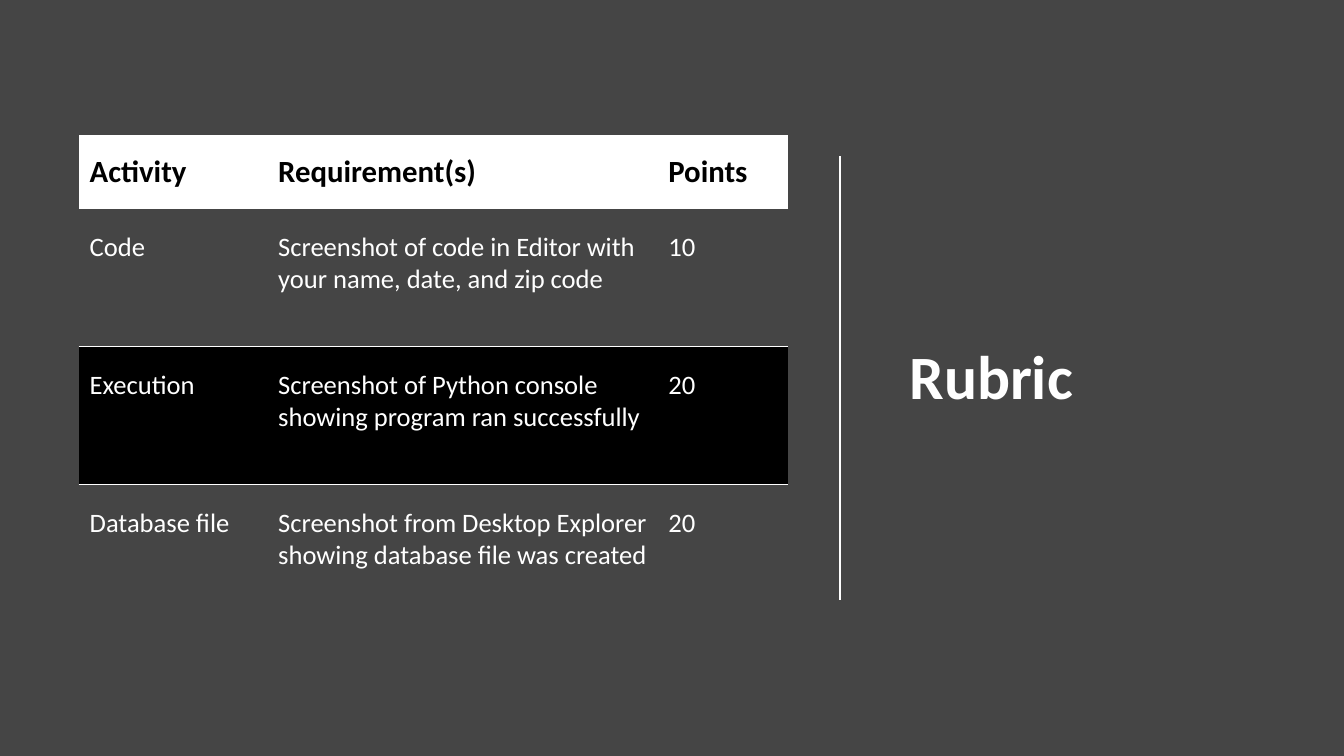
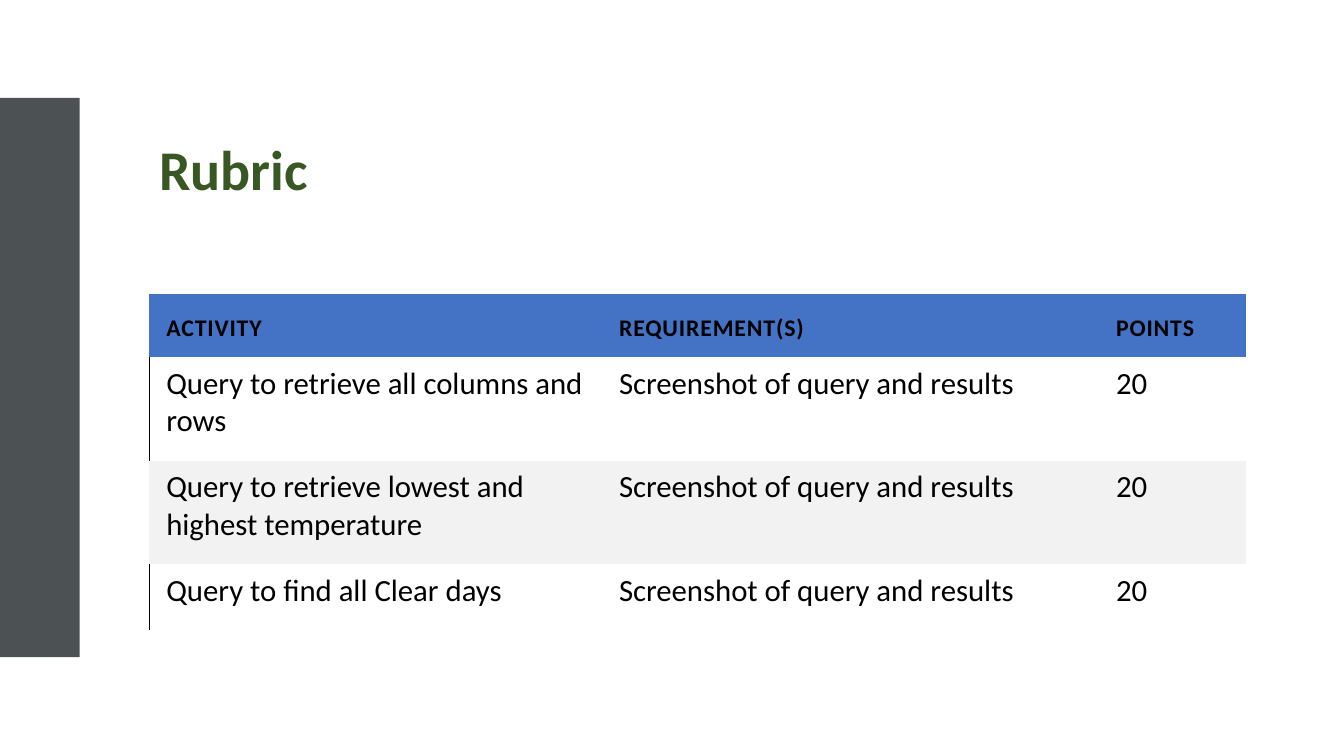
"""Build two rubric slides, each with a title and a grading table."""
from lxml import etree
from pptx import Presentation
from pptx.dml.color import RGBColor
from pptx.enum.shapes import MSO_CONNECTOR, MSO_SHAPE
from pptx.enum.text import MSO_ANCHOR, MSO_AUTO_SIZE, PP_ALIGN
from pptx.oxml.ns import qn
from pptx.util import Inches, Pt

TOP, MIDDLE, BOTTOM = MSO_ANCHOR.TOP, MSO_ANCHOR.MIDDLE, MSO_ANCHOR.BOTTOM
LEFT = PP_ALIGN.LEFT
STRAIGHT, RECTANGLE = MSO_CONNECTOR.STRAIGHT, MSO_SHAPE.RECTANGLE
NO_AUTOFIT = MSO_AUTO_SIZE.NONE

FONT = "Calibri"
TITLE = "Rubric"
TITLE_ONLY_LAYOUT = 5
PLAIN_TABLE_STYLE = "{2D5ABB26-0587-4C30-8999-92F81FD0307C}"
COLORS = {
    "charcoal": "454545",
    "white": "FFFFFF",
    "black": "000000",
    "green": "385723",
    "slate": "4C5254",
    "blue": "4472C4",
    "pale": "F2F2F2",
}

PROJECT_ROWS = [
    ("Activity", "Requirement(s)", "Points"),
    ("Code", "Screenshot of code in Editor with your name, date, and zip code", "10"),
    ("Execution", "Screenshot of Python console showing program ran successfully", "20"),
    ("Database file", "Screenshot from Desktop Explorer showing database file was created", "20"),
]
QUERY_RESULT = ("Screenshot of query and results", "20")
QUERY_ROWS = [
    ("ACTIVITY", "REQUIREMENT(S)", "POINTS"),
    ("Query to retrieve all columns and rows", *QUERY_RESULT),
    ("Query to retrieve lowest and highest temperature", *QUERY_RESULT),
    ("Query to find all Clear days", *QUERY_RESULT),
]

PROJECT_STYLE = {
    "header": {"size": 22, "color": "black", "bold": True, "anchor": MIDDLE,
               "insets": (0.11, 0.15, 0.08, 0.15), "fill": "white"},
    "body": {"size": 19, "color": "white", "bold": False, "anchor": TOP,
             "insets": (0.11, 0.22, 0.08, 0.15)},
    "band": "black",
}
QUERY_STYLE = {
    "header": {"size": 17, "color": "black", "bold": True, "anchor": BOTTOM,
               "insets": (0.17, 0.14, 0.17, 0.14), "fill": "blue", "spacing": 60},
    "body": {"size": 22, "color": "black", "bold": False, "anchor": TOP,
             "insets": (0.17, 0.08, 0.17, 0.14)},
    "band": "pale",
}


def rgb(name):
    return RGBColor.from_string(COLORS[name])


def write_run(paragraph, text, size, color, bold):
    paragraph.alignment = LEFT
    run = paragraph.add_run()
    run.text = text
    run.font.name = FONT
    run.font.size = Pt(size)
    run.font.bold = bold
    run.font.color.rgb = rgb(color)
    return run


def add_titled_slide(deck, background, box, size, color, anchor):
    slide = deck.slides.add_slide(deck.slide_layouts[TITLE_ONLY_LAYOUT])
    slide.background.fill.solid()
    slide.background.fill.fore_color.rgb = rgb(background)
    title = slide.shapes.title
    title.left, title.top, title.width, title.height = map(Inches, box)
    frame = title.text_frame
    frame.word_wrap = True
    frame.auto_size = NO_AUTOFIT
    frame.vertical_anchor = anchor
    paragraph = frame.paragraphs[0]
    paragraph.line_spacing = 0.9
    write_run(paragraph, TITLE, size, color, True)
    return slide


def draw_border(cell, side, color):
    border = etree.Element(qn(f"a:ln{side}"), w=str(Pt(1)))
    fill = etree.SubElement(border, qn("a:solidFill"))
    etree.SubElement(fill, qn("a:srgbClr"), val=COLORS[color])
    cell._tc.get_or_add_tcPr().insert(0, border)


def fill_cell(cell, text, style, fill):
    cell.margin_left, cell.margin_top, cell.margin_right, cell.margin_bottom = map(
        Inches, style["insets"])
    cell.vertical_anchor = style["anchor"]
    if fill:
        cell.fill.solid()
        cell.fill.fore_color.rgb = rgb(fill)
    else:
        cell.fill.background()
    run = write_run(cell.text_frame.paragraphs[0], text,
                    style["size"], style["color"], style["bold"])
    if "spacing" in style:
        run.font._element.set("spc", str(style["spacing"]))


def add_rubric(slide, rows, left, top, widths, heights, style):
    table = slide.shapes.add_table(
        len(rows), len(widths), Inches(left), Inches(top),
        Inches(sum(widths)), Inches(sum(heights))).table
    table.first_row = table.horz_banding = False
    table._tbl.tblPr.find(qn("a:tableStyleId")).text = PLAIN_TABLE_STYLE
    for column, width in zip(table.columns, widths):
        column.width = Inches(width)
    for row, height in zip(table.rows, heights):
        row.height = Inches(height)
    for r, texts in enumerate(rows):
        part = style["body"] if r else style["header"]
        fill = part.get("fill") or (style["band"] if r % 2 == 0 else None)
        for c, text in enumerate(texts):
            fill_cell(table.cell(r, c), text, part, fill)
    return table


def add_project_slide(deck):
    slide = add_titled_slide(deck, "charcoal", (8.92, 0.9, 3.63, 3.25), 44, "white", BOTTOM)
    divider = slide.shapes.add_connector(
        STRAIGHT, Inches(8.33), Inches(1.55), Inches(8.33), Inches(5.95))
    divider.line.color.rgb = rgb("white")
    divider.line.width = Pt(1.25)
    etree.SubElement(divider._element.spPr, qn("a:effectLst"))
    table = add_rubric(slide, PROJECT_ROWS, 0.78, 1.34, (1.87, 3.87, 1.3),
                       (0.73, 1.37, 1.37, 1.37), PROJECT_STYLE)
    for c in range(len(table.columns)):
        draw_border(table.cell(1, c), "B", "white")
        draw_border(table.cell(2, c), "T", "white")


def add_query_slide(deck):
    slide = add_titled_slide(deck, "white", (1.48, 0.97, 10.88, 1.47), 40, "green", MIDDLE)
    side_band = slide.shapes.add_shape(
        RECTANGLE, Inches(0), Inches(0.97), Inches(0.79), Inches(5.55))
    side_band.shadow.inherit = False
    side_band.fill.solid()
    side_band.fill.fore_color.rgb = rgb("slate")
    side_band.line.fill.background()
    table = add_rubric(slide, QUERY_ROWS, 1.48, 2.92, (4.49, 4.93, 1.46),
                       (0.62, 1.03, 1.03, 0.65), QUERY_STYLE)
    for r in (1, 3):
        draw_border(table.cell(r, 0), "L", "black")


def main():
    deck = Presentation()
    deck.slide_width, deck.slide_height = Inches(13.33), Inches(7.5)
    add_project_slide(deck)
    add_query_slide(deck)
    deck.save("out.pptx")


if __name__ == "__main__":
    main()
